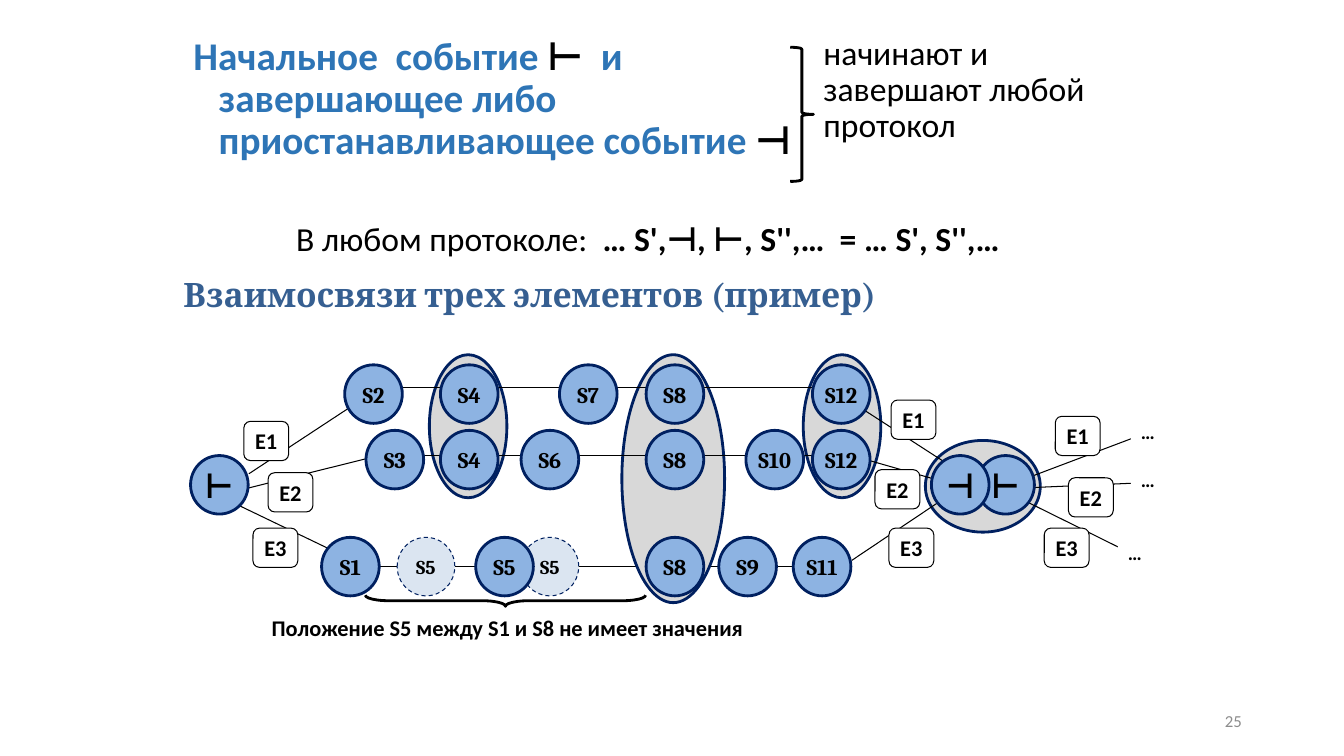
"""Builds the slide on initial and final events and the three-element protocol diagram."""
from dataclasses import dataclass

from lxml import etree
from pptx import Presentation
from pptx.dml.color import RGBColor
from pptx.enum.dml import MSO_LINE
from pptx.enum.shapes import MSO_CONNECTOR, MSO_SHAPE
from pptx.enum.text import MSO_ANCHOR, MSO_AUTO_SIZE, PP_ALIGN
from pptx.oxml.ns import qn
from pptx.util import Pt

LEFT, CENTER, RIGHT = PP_ALIGN.LEFT, PP_ALIGN.CENTER, PP_ALIGN.RIGHT
TOP, MIDDLE = MSO_ANCHOR.TOP, MSO_ANCHOR.MIDDLE
FIXED, GROW = MSO_AUTO_SIZE.NONE, MSO_AUTO_SIZE.SHAPE_TO_FIT_TEXT
RECT, ROUND, OVAL = MSO_SHAPE.RECTANGLE, MSO_SHAPE.ROUNDED_RECTANGLE, MSO_SHAPE.OVAL
BRACE, STRAIGHT, DASH = MSO_SHAPE.RIGHT_BRACE, MSO_CONNECTOR.STRAIGHT, MSO_LINE.DASH
BREAK = "\n"


@dataclass(frozen=True)
class Theme:
    sans: str = "Calibri"
    serif: str = "Cambria"
    ink: str = "000000"
    paper: str = "FFFFFF"
    accent: str = "2E75B6"
    heading: str = "365F91"
    state: str = "8DB3E2"
    ghost: str = "DBE5F1"
    sync: str = "D8D8D8"
    outline: str = "002060"
    number: str = "8C8C8C"
    lead: int = 28
    text: int = 24
    label: int = 16
    small: int = 14
    note: int = 12
    thin: float = 0.75
    thick: float = 2


def apply(obj, values):
    for name, value in values.items():
        setattr(obj, name, value)


class Board:
    def __init__(self, slide, theme):
        self.slide, self.theme, self.shapes = slide, theme, slide.shapes

    def place(self, s, box):
        apply(s, dict(zip(("left", "top", "width", "height"), map(Pt, box))))

    def add_text(self, s, runs, size, font=None, color=None, bold=False, frame=None, para=None):
        tf = s.text_frame
        apply(tf, {"word_wrap": True, "vertical_anchor": TOP, "auto_size": FIXED, **(frame or {})})
        p = tf.paragraphs[0]
        apply(p, {"alignment": LEFT, **(para or {})})
        for text, extra in runs:
            if text == BREAK:
                p.add_line_break()
                continue
            r = p.add_run()
            r.text = text
            look = {"name": font or self.theme.sans, "size": Pt(size), "bold": bold, **extra}
            tint = look.pop("color", color or self.theme.ink)
            apply(r.font, look)
            r.font.color.rgb = RGBColor.from_string(tint)
        return p

    def body(self, index, box, runs, size, hang=0, **style):
        s = self.slide.placeholders[index]
        self.place(s, box)
        para = {"line_spacing": 0.9, "space_before": Pt(10)}
        p = self.add_text(s, runs, size, para=para, **style)
        pPr = p._p.get_or_add_pPr()
        pPr.set("marL", str(Pt(hang)))
        pPr.set("indent", str(-Pt(hang)))
        etree.SubElement(pPr, qn("a:buNone"))

    def heading(self, box, text):
        s = self.slide.shapes.title
        self.place(s, box)
        s.fill.solid()
        s.fill.fore_color.rgb = RGBColor.from_string(self.theme.paper)
        self.add_text(s, [(text, {})], self.theme.text, self.theme.serif, self.theme.heading, True,
                      self.tight(TOP), {"space_before": Pt(12), "space_after": Pt(10)})

    def textbox(self, box, runs, size, **style):
        s = self.shapes.add_textbox(*map(Pt, box))
        self.add_text(s, runs, size, **style)

    def tight(self, anchor=MIDDLE):
        sides = ("margin_left", "margin_top", "margin_right", "margin_bottom")
        return {"vertical_anchor": anchor, **dict.fromkeys(sides, 0)}

    def shape(self, kind, box, fill=None, line=None, width=0, dash=None):
        s = self.shapes.add_shape(kind, *map(Pt, box))
        s.shadow.inherit = False
        if fill:
            s.fill.solid()
            s.fill.fore_color.rgb = RGBColor.from_string(fill)
        else:
            s.fill.background()
        if line:
            s.line.color.rgb = RGBColor.from_string(line)
            apply(s.line, {"width": Pt(width), "dash_style": dash})
        else:
            s.line.fill.background()
        return s

    def label(self, box, text, size, align=LEFT):
        s = self.shape(RECT, box, self.theme.paper)
        self.add_text(s, [(text, {})], size, bold=True,
                      para={"alignment": align, "space_after": Pt(10)})

    def state(self, x, y, text, size=None, ghost=False):
        t = self.theme
        fill, width, dash = (t.ghost, t.thin, DASH) if ghost else (t.state, t.thick, None)
        s = self.shape(OVAL, (x, y, 41.2, 41.8), fill, t.outline, width, dash)
        self.add_text(s, [(text, {})], size or t.label, t.serif, bold=True, frame=self.tight(),
                      para={"alignment": CENTER, "space_after": Pt(10)})

    def sync(self, *box):
        self.shape(OVAL, box, self.theme.sync, self.theme.outline, self.theme.thick)

    def tag(self, x, y, text):
        t = self.theme
        s = self.shape(ROUND, (x, y, 32, 28), t.paper, t.ink, t.thin)
        self.add_text(s, [(text, {})], t.label, bold=True, frame=self.tight(),
                      para={"alignment": CENTER, "space_after": Pt(10)})

    def line(self, *ends):
        c = self.shapes.add_connector(STRAIGHT, *map(Pt, ends))
        c.line.color.rgb = RGBColor.from_string(self.theme.ink)
        c.line.width = Pt(self.theme.thin)
        etree.SubElement(c._element.spPr, qn("a:effectLst"))

    def brace(self, box, rotation=0, curve=0.08):
        s = self.shape(BRACE, box, None, self.theme.ink, self.theme.thick)
        s.rotation = rotation
        s.adjustments[0] = curve


def draw_statement(board):
    t = board.theme
    black = {"color": t.ink}
    board.body(1, (131, 22.3, 461.5, 168.5),
               [("Начальное  событие ", {}), ("⊢  ", black), ("и", {}), (BREAK, {}),
                ("завершающее либо приостанавливающее событие ", {}), ("⊣", black)],
               t.lead, hang=18, color=t.accent, bold=True)
    board.body(2, (581, 22.3, 222.5, 356.4), [("начинают и завершают любой протокол", {})], t.text)
    board.brace((564.5, 33.8, 16.6, 95.8))
    board.textbox((204.5, 152, 545.8, 36.7),
                  [("В любом протоколе: ", {}),
                   (" … S',⊣, ⊢, S'',…  = … S', S'',…", {"bold": True})],
                  t.text, frame={"auto_size": GROW})
    board.heading((131, 195.8, 561, 41.8), "Взаимосвязи трех элементов (пример)")
    board.textbox((678.2, 500.4, 216, 28.8), [("25", {})], t.note, color=t.number,
                  frame={"vertical_anchor": MIDDLE}, para={"alignment": RIGHT})


def draw_diagram(board):
    t = board.theme
    board.shapes = board.slide.shapes.add_group_shape().shapes
    board.line(261.4, 404.6, 581.8, 404.6)
    board.label((159.1, 434.9, 406.8, 38.2), "Положение S5 между S1 и S8 не имеет значения",
                t.label, CENTER)
    for box in ((573.8, 253.4, 55.4, 102.2), (444.2, 253.4, 73.4, 177.1),
                (306.7, 253.4, 55.4, 102.2), (661, 314.6, 82.1, 65.5)):
        board.sync(*box)
    for ends in ((177.8, 348.5, 270.7, 325.4), (296.6, 325.4, 587.5, 325.4),
                 (608.4, 325.4, 666.7, 342), (171.4, 361.4, 246.2, 397.4),
                 (283.7, 276.5, 581.8, 276.5), (177.8, 338.4, 257.8, 285.8),
                 (616.3, 292.3, 675.4, 330.5), (608.4, 400.3, 671.8, 357.8),
                 (732.2, 342, 812.2, 311.8), (732.2, 348.5, 815, 344.9),
                 (732.2, 357.8, 812.2, 397.4)):
        board.line(*ends)
    for spots in (((174.2, 301), (191.5, 337.7), (180.7, 377.3)),
                  ((636.5, 285.8), (625, 335.5), (635, 377.3)),
                  ((753.8, 297.4), (763.2, 341.3), (745.9, 377.3))):
        for number, (x, y) in enumerate(spots, 1):
            board.tag(x, y, f"E{number}")
    for x, y in ((807.8, 296.6), (798.5, 383), (807.8, 330.5)):
        board.label((x, y, 32.4, 21.6), "…", t.small)
    board.brace((357.1, 329, 7.9, 200.2), 90, 2.1)
    for x in (372.2, 283.7):
        board.state(x, 383.8, "S5", t.small, ghost=True)
    rows = {260.6: (("S2", 246.2), ("S4", 314.6), ("S7", 399.6), ("S8", 461.5), ("S12", 580.3)),
            307.4: (("S3", 261.4), ("S4", 314.6), ("S6", 372.2), ("S8", 461.5), ("S10", 532.8),
                    ("S12", 580.3)),
            383.8: (("S1", 229.7), ("S5", 339.8), ("S8", 461.5), ("S9", 513.4), ("S11", 566.6))}
    for y, states in rows.items():
        for text, x in states:
            board.state(x, y, text)
    for text, x in (("⊢", 136.1), ("⊢", 697.7), ("⊣", 665.3)):
        board.state(x, 325.4, text, t.text)


def main():
    prs = Presentation()
    prs.slide_width, prs.slide_height = Pt(960), Pt(540)
    board = Board(prs.slides.add_slide(prs.slide_layouts[3]), Theme())
    draw_statement(board)
    draw_diagram(board)
    prs.save("out.pptx")


if __name__ == "__main__":
    main()
